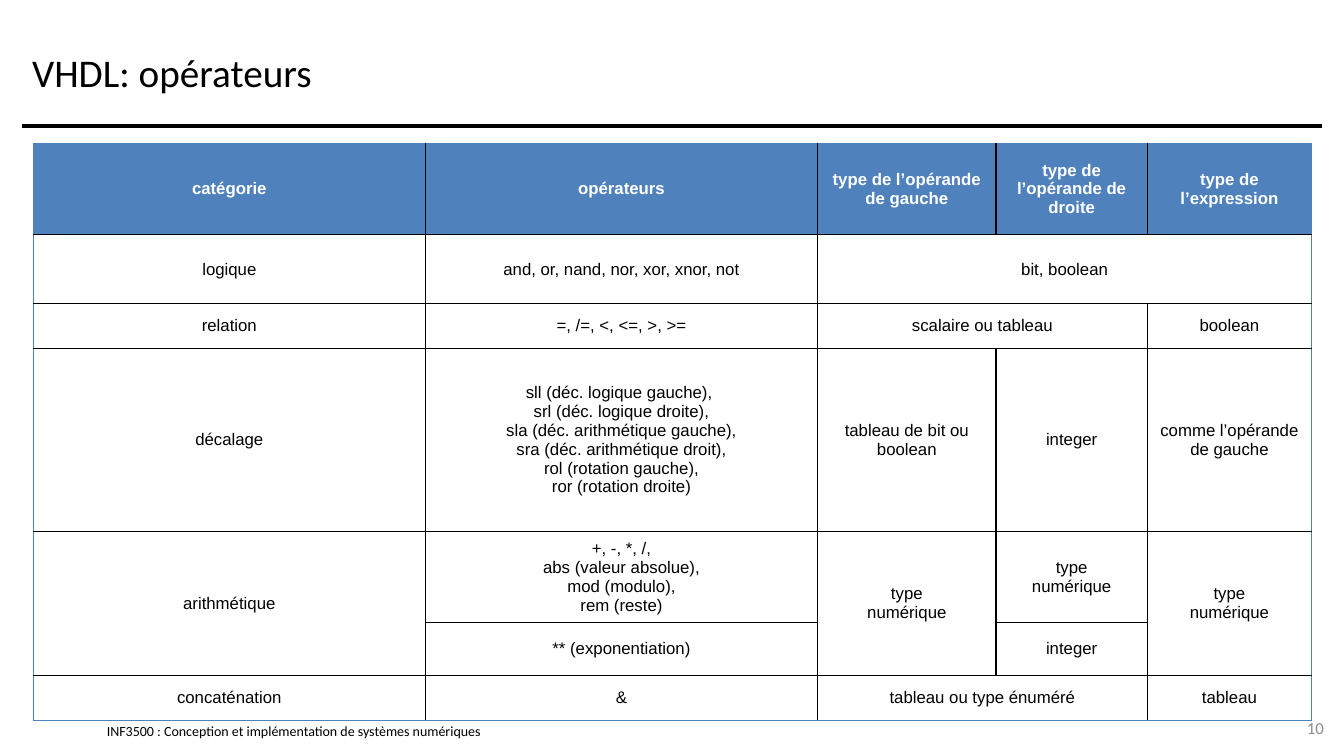
from itertools import product

from lxml.etree import SubElement
from pptx import Presentation
from pptx.dml.color import RGBColor
from pptx.enum.shapes import MSO_CONNECTOR
from pptx.enum.text import MSO_ANCHOR, PP_ALIGN
from pptx.oxml.ns import qn
from pptx.util import Inches, Pt

COLORS = {"black": "000000", "white": "FFFFFF", "blue": "4F81BD", "gray": "8C8C8C"}

TITLE = "VHDL: opérateurs"
COURSE = "INF3500 : Conception et implémentation de systèmes numériques"
PAGE = "10"

# "<" joins a cell to the one on its left, "^" to the one above
ROWS = [
    ["catégorie", "opérateurs", "type de l’opérande\nde gauche",
     "type de l’opérande de droite", "type de l’expression"],
    ["logique", "and, or, nand, nor, xor, xnor, not", "bit, boolean", "<", "<"],
    ["relation", "=, /=, <, <=, >, >=", "scalaire ou tableau", "<", "boolean"],
    ["décalage",
     "sll (déc. logique gauche), \nsrl (déc. logique droite),\n"
     "sla (déc. arithmétique gauche),\nsra (déc. arithmétique droit),\n"
     "rol (rotation gauche),\nror (rotation droite)",
     "tableau de bit ou boolean", "integer", "comme l’opérande de gauche"],
    ["arithmétique",
     "+, -, *, /,\nabs (valeur absolue),\nmod (modulo),\nrem (reste)",
     "type\nnumérique", "type\nnumérique", "type\nnumérique"],
    ["^", "** (exponentiation)", "^", "integer", "^"],
    ["concaténation", "&", "tableau ou type énuméré", "<", "tableau"],
]
COL_WIDTHS = [3.89, 3.89, 1.77, 1.5, 1.63]
ROW_HEIGHTS = [0.91, 0.68, 0.45, 1.81, 0.91, 0.52, 0.45]
TABLE_LEFT, TABLE_TOP = 0.33, 1.42


def rgb(name):
    return RGBColor.from_string(COLORS[name])


def write(tf, text, size, font="Calibri", color="black", bold=False,
          align=PP_ALIGN.LEFT, spacing=0):
    p = tf.paragraphs[0]
    p.text = text
    p.alignment = align
    p.space_before = p.space_after = Pt(spacing)
    for r in p.runs:
        r.font.name, r.font.size, r.font.bold = font, Pt(size), bold
        r.font.color.rgb = rgb(color)
    for br in p._p.findall(qn("a:br")):
        SubElement(br, qn("a:rPr"), sz=str(size * 100))


def add_text(slide, box, text, size, inset=(0.1, 0.05), **fmt):
    tf = slide.shapes.add_textbox(*map(Inches, box)).text_frame
    tf.word_wrap = True
    tf.vertical_anchor = MSO_ANCHOR.MIDDLE
    tf.margin_left = tf.margin_right = Inches(inset[0])
    tf.margin_top = tf.margin_bottom = Inches(inset[1])
    write(tf, text, size, **fmt)


def span(row, col):
    """Number of rows and columns that the cell covers."""
    height = width = 1
    while row + height < len(ROWS) and ROWS[row + height][col] == "^":
        height += 1
    while col + width < len(ROWS[row]) and ROWS[row][col + width] == "<":
        width += 1
    return height, width


def set_borders(cell, sides):
    tcPr = cell._tc.get_or_add_tcPr()
    for side, color in sides.items():
        ln = SubElement(tcPr, qn(f"a:ln{side}"), w=str(Pt(1)))
        SubElement(SubElement(ln, qn("a:solidFill")), qn("a:srgbClr"), val=COLORS[color])


def add_operator_table(slide):
    n_rows, n_cols = len(ROWS), len(COL_WIDTHS)
    table = slide.shapes.add_table(
        n_rows, n_cols, Inches(TABLE_LEFT), Inches(TABLE_TOP),
        Inches(sum(COL_WIDTHS)), Inches(sum(ROW_HEIGHTS))).table
    for column, width in zip(table.columns, COL_WIDTHS):
        column.width = Inches(width)
    for row, height in zip(table.rows, ROW_HEIGHTS):
        row.height = Inches(height)

    for r, c in product(range(n_rows), range(n_cols)):
        text = ROWS[r][c]
        if text in ("<", "^"):
            continue
        height, width = span(r, c)
        bottom, right = r + height, c + width
        outer = {"L": c == 0, "R": right == n_cols, "T": r == 0, "B": bottom == n_rows}
        sides = {side: "blue" if edge else "black" for side, edge in outer.items()}
        for i, j in product(range(r, bottom), range(c, right)):
            part = table.cell(i, j)
            set_borders(part, sides)
            part.fill.solid()
            part.fill.fore_color.rgb = rgb("white" if r else "blue")
        cell = table.cell(r, c)
        if height * width > 1:
            cell.merge(table.cell(bottom - 1, right - 1))
        cell.vertical_anchor = MSO_ANCHOR.MIDDLE
        cell.margin_left = cell.margin_right = Inches(0.09)
        cell.margin_top = cell.margin_bottom = 0
        write(cell.text_frame, text, 12, font="Arial", bold=r == 0, spacing=2,
              color="black" if r else "white", align=PP_ALIGN.CENTER)


def main():
    prs = Presentation()
    prs.slide_width, prs.slide_height = Inches(13.33), Inches(7.5)
    slide = prs.slides.add_slide(prs.slide_layouts[6])

    add_text(slide, (1.06, 7.17, 5.11, 0.17), COURSE, 10, inset=(0, 0))
    rule = slide.shapes.add_connector(
        MSO_CONNECTOR.STRAIGHT, Inches(0.22), Inches(1.25), Inches(13.11), Inches(1.25))
    rule.line.color.rgb = rgb("black")
    rule.line.width = Pt(3)
    SubElement(rule._element.spPr, qn("a:effectLst"))
    add_text(slide, (0.22, 0.17, 12.89, 1.08), TITLE, 28)
    add_text(slide, (12.56, 7.02, 0.67, 0.4), PAGE, 12, color="gray", align=PP_ALIGN.RIGHT)
    add_operator_table(slide)
    prs.save("out.pptx")


if __name__ == "__main__":
    main()
